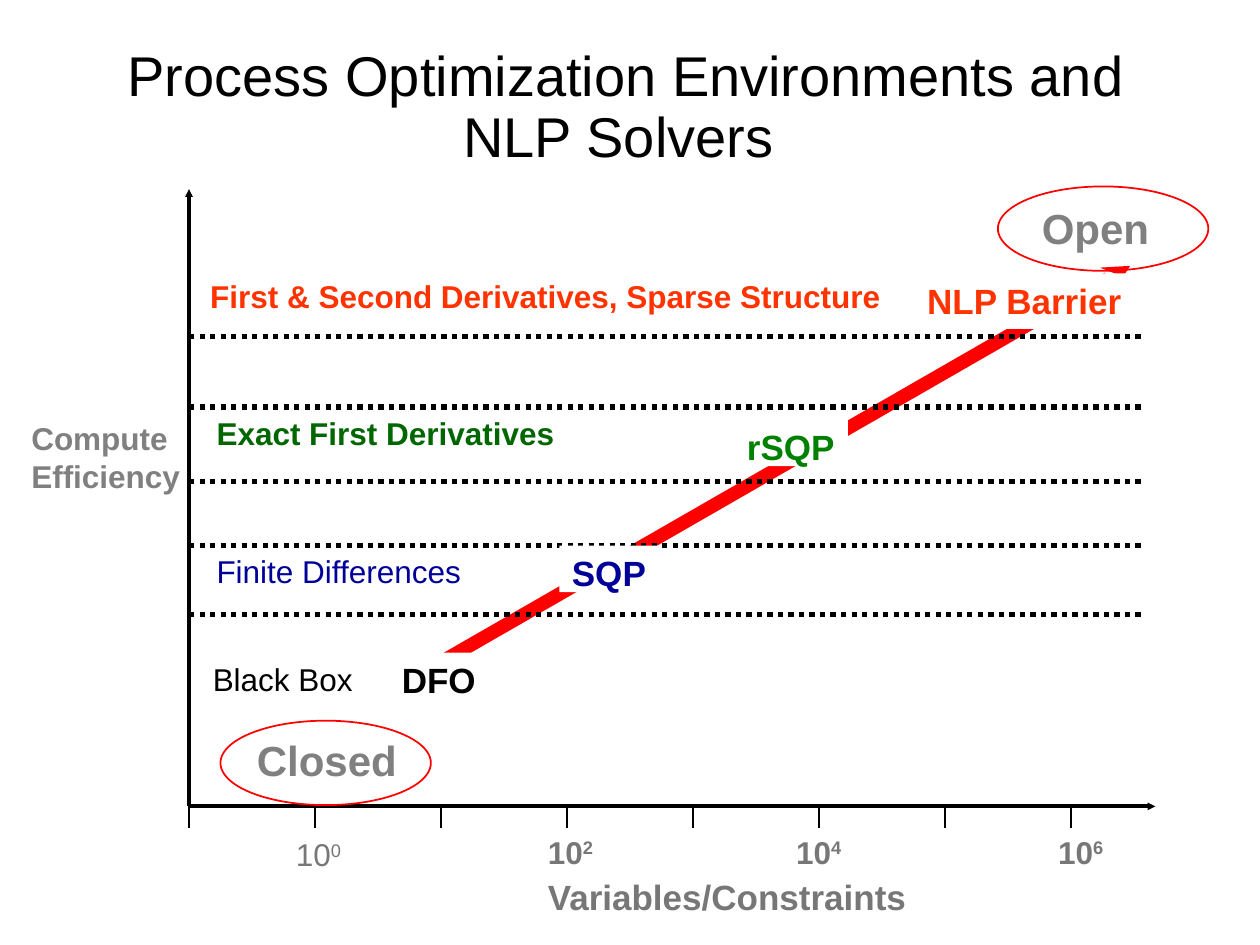
from lxml.etree import SubElement
from pptx import Presentation
from pptx.dml.color import RGBColor
from pptx.enum.dml import MSO_LINE
from pptx.enum.shapes import MSO_CONNECTOR, MSO_SHAPE
from pptx.enum.text import MSO_ANCHOR, MSO_AUTO_SIZE, PP_ALIGN
from pptx.oxml.ns import qn
from pptx.util import Pt

PX = 9144  # EMU per px, 100 px to the inch
FONT = "Arial"
COLORS = {
    "black": "000000", "white": "FFFFFF", "red": "FF0000", "gray": "808080",
    "axis_gray": "777777", "navy": "000099", "dark_green": "006600",
    "green": "008000", "orange": "FF3300",
}


def px(*lengths):
    return [n * PX for n in lengths]


def rgb(name):
    return RGBColor.from_string(COLORS[name])


class SlideBuilder:
    def __init__(self, prs):
        self.s = prs.slides.add_slide(prs.slide_layouts[6])

    def style(self, r, size, color, bold):
        r.font.name = FONT
        r.font.size = Pt(size)
        r.font.bold = bold
        r.font.color.rgb = rgb(color)

    def fill_text(self, sp, lines, size, color, bold):
        """Write one paragraph per line into a frame that fits its text."""
        tf = sp.text_frame
        tf.word_wrap = False
        tf.auto_size = MSO_AUTO_SIZE.SHAPE_TO_FIT_TEXT
        tf.vertical_anchor = MSO_ANCHOR.TOP
        tf.text = lines
        for p in tf.paragraphs:
            p.alignment = PP_ALIGN.LEFT
            for r in p.runs:
                self.style(r, size, color, bold)

    def title(self, text, box):
        tf = self.s.shapes.add_textbox(*px(*box)).text_frame
        tf.word_wrap = True
        tf.vertical_anchor = MSO_ANCHOR.MIDDLE
        tf.margin_left = tf.margin_right = 8 * PX
        tf.margin_top = tf.margin_bottom = 4 * PX
        tf.text = text
        p = tf.paragraphs[0]
        p.alignment = PP_ALIGN.CENTER
        p.line_spacing = 0.9
        self.style(p.runs[0], 32, "black", False)

    def label(self, text, box, color, size=18, bold=True):
        sp = self.s.shapes.add_textbox(*px(*box))
        self.fill_text(sp, text, size, color, bold)
        return sp

    def power_of_ten(self, exponent, left, top, bold=True):
        sp = self.label("10", (left, top, 57, 40), "axis_gray", bold=bold)
        r = sp.text_frame.paragraphs[0].add_run()
        r.text = str(exponent)
        self.style(r, 18, "axis_gray", bold)
        r._r.get_or_add_rPr().set("baseline", "30000")

    def line(self, start, end, width, color="black", dash=None, head=None):
        sp = self.s.shapes.add_connector(MSO_CONNECTOR.STRAIGHT, *px(*start, *end))
        sp.line.color.rgb = rgb(color)
        sp.line.width = Pt(width)
        if dash:
            sp.line.dash_style = dash
        if head:
            SubElement(sp.line._get_or_add_ln(), qn("a:tailEnd"), type=head, w="sm", len="sm")
        SubElement(sp._element.spPr, qn("a:effectLst"))

    def ellipse(self, left, top):
        sp = self.s.shapes.add_shape(MSO_SHAPE.OVAL, *px(left, top, 167, 67))
        sp.shadow.inherit = False
        sp.fill.background()
        sp.line.color.rgb = rgb("red")
        sp.line.width = Pt(1)

    def solver(self, text, box, color):
        """A white plate that interrupts the trend arrow."""
        sp = self.s.shapes.add_shape(MSO_SHAPE.RECTANGLE, *px(*box))
        sp.shadow.inherit = False
        sp.fill.solid()
        sp.fill.fore_color.rgb = rgb("white")
        sp.line.fill.background()
        self.fill_text(sp, text, 20, color, True)


def main():
    prs = Presentation()
    prs.slide_width, prs.slide_height = px(1000, 750)
    b = SlideBuilder(prs)

    b.title("Process Optimization Environments and NLP Solvers ", (72, 24, 850, 125))
    b.label("Closed", (194, 578, 131, 50), "gray", size=24)
    b.label("Open", (817, 156, 105, 50), "gray", size=24)

    # Trend arrow and axes
    origin = (150, 640)
    b.line((337, 533), (897, 211), 7.75, "red", head="stealth")
    b.line(origin, (150, 150), 2.25, head="triangle")
    b.line(origin, (917, 640), 2.25, head="triangle")
    b.label("Variables/Constraints", (425, 690, 306, 43), "axis_gray", size=20)
    for x in range(150, 851, 100):
        b.line((x, 640), (x, 657), 1)
    for exponent, left in ((2, 425), (4, 622), (6, 830)):
        b.power_of_ten(exponent, left, 656)

    # Derivative levels
    for y in (488, 433, 382, 323, 267):
        b.line((150, y), (908, y), 3, dash=MSO_LINE.ROUND_DOT)
    for text, box, color, bold in (
        ("Black Box", (159, 519, 131, 40), "black", False),
        ("Finite Differences", (162, 433, 215, 40), "navy", False),
        ("Exact First Derivatives", (162, 324, 291, 40), "dark_green", True),
        ("First & Second Derivatives, Sparse Structure", (157, 215, 553, 40), "orange", True),
    ):
        b.label(text, box, color, bold=bold)

    b.ellipse(175, 572)
    b.ellipse(792, 148)
    b.power_of_ten(0, 225, 658, bold=False)
    b.label("Compute\nEfficiency", (15, 328, 138, 70), "gray")

    for text, box, color in (
        ("SQP", (444, 433, 79, 37), "navy"),
        ("rSQP", (583, 333, 90, 37), "green"),
        ("NLP Barrier", (726, 217, 176, 44), "orange"),
        ("DFO", (309, 518, 79, 37), "black"),
    ):
        b.solver(text, box, color)

    prs.save("out.pptx")


if __name__ == "__main__":
    main()
